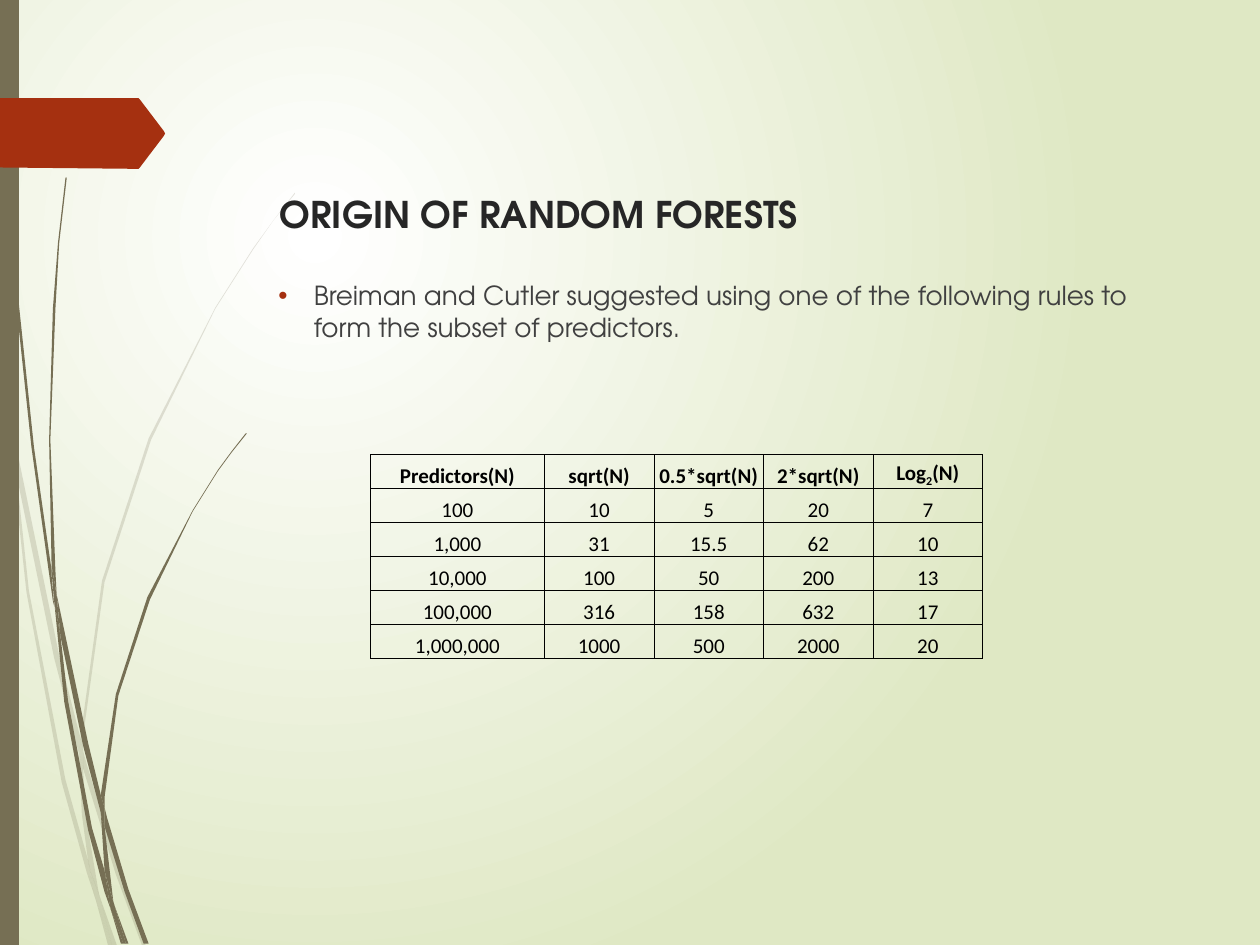
from dataclasses import dataclass

from lxml import etree
from pptx import Presentation
from pptx.dml.color import RGBColor
from pptx.enum.shapes import MSO_SHAPE
from pptx.enum.text import MSO_ANCHOR, PP_ALIGN
from pptx.oxml.ns import qn
from pptx.util import Inches, Pt

RECTANGLE = MSO_SHAPE.RECTANGLE
TOP, MIDDLE, BOTTOM = MSO_ANCHOR.TOP, MSO_ANCHOR.MIDDLE, MSO_ANCHOR.BOTTOM
CENTER = PP_ALIGN.CENTER


@dataclass(frozen=True)
class Theme:
    glow: str = "FFFFFF"
    backdrop: str = "DFE8C4"
    stem: str = "766F54"
    accent: str = "A53010"
    title: str = "262626"
    body: str = "404040"
    table: str = "000000"
    heading_font: str = "TeX Gyre Adventor"
    table_font: str = "Calibri"
    title_size: float = 21
    body_size: float = 15
    table_size: float = 12
    border_width: float = 0.5


THEME = Theme()
TITLE = "ORIGIN OF RANDOM FORESTS"
RULE = "Breiman and Cutler suggested using one of the following rules to form the subset of predictors."
HEADERS = [["Predictors(N)"], ["sqrt(N)"], ["0.5*sqrt(N)"], ["2*sqrt(N)"], ["Log", "2", "(N)"]]
ROWS = [
    ["100", "10", "5", "20", "7"],
    ["1,000", "31", "15.5", "62", "10"],
    ["10,000", "100", "50", "200", "13"],
    ["100,000", "316", "158", "632", "17"],
    ["1,000,000", "1000", "500", "2000", "20"],
]
COLUMN_WIDTHS = [1.38] + [0.87] * 4
ROW_HEIGHT = 0.27

PALE_STEMS = [
    [(0.08, 3.5), (0.06, 3.22), (0, 2.82), (0, 2.99), (0.08, 3.44)],
    [(0.43, 5.22), (0.63, 5.99), (0.64, 5.86), (0.47, 5.2), (0.11, 3.45), (0.13, 3.76)],
    [(0.69, 6.07), (0.66, 5.96), (0.66, 6.1), (0.92, 6.94), (1.13, 7.51), (1.16, 7.51), (0.95, 6.92)],
    [(0.89, 7.51), (0.93, 7.51), (0.79, 7.11)],
    [(0.7, 6.83), (0.52, 6.19), (0.23, 4.69), (0.13, 3.76), (0.08, 3.5), (0.21, 4.7),
     (0.49, 6.21), (0.69, 6.93), (0.76, 7.14), (0.74, 7.07)],
    [(0.63, 5.99), (0.65, 6.46), (0.7, 6.83), (0.72, 6.92), (0.79, 7.11), (0.78, 7.06),
     (0.68, 6.46), (0.66, 6.1), (0.66, 6.08)],
    [(0.66, 5.84), (0.83, 4.62), (1.2, 3.49), (1.71, 2.45), (2.01, 1.98), (2.17, 1.75),
     (2.34, 1.54), (2.34, 1.53), (2.17, 1.75), (2.01, 1.97), (1.71, 2.44), (1.18, 3.48),
     (0.81, 4.61), (0.64, 5.84), (0.64, 5.86), (0.66, 5.96)],
    [(0.76, 7.14), (0.86, 7.51), (0.89, 7.51)],
    [(0.66, 6.08), (0.66, 6.1), (0.66, 5.96), (0.64, 5.86), (0.63, 5.99)],
    [(0.72, 6.92), (0.7, 6.83), (0.74, 7.07), (0.76, 7.14), (0.89, 7.51), (0.79, 7.11)],
]
DARK_STEMS = [
    [(0.05, 1.1), (0.12, 2.33), (0.25, 3.55), (0.42, 4.77), (0.43, 4.81), (0.41, 4.57),
     (0.41, 4.53), (0.27, 3.55), (0.14, 2.32), (0.06, 1.09), (0.03, 0.48), (0.03, 0),
     (0.02, 0), (0.03, 0.48)],
    [(0.66, 5.92), (0.8, 6.45), (0.8, 6.31), (0.7, 5.9), (0.45, 4.72), (0.48, 5.05)],
    [(0.85, 6.49), (0.83, 6.41), (0.83, 6.56), (0.99, 7.08), (1.14, 7.49), (1.18, 7.49), (1.02, 7.06)],
    [(0.83, 6.91), (0.73, 6.57), (0.54, 5.56), (0.48, 5.05), (0.43, 4.77), (0.51, 5.57),
     (0.7, 6.59), (0.83, 7.08), (0.88, 7.22), (0.87, 7.17)],
    [(0.45, 4.72), (0.44, 4.53), (0.4, 3.49), (0.44, 2.45), (0.47, 1.93), (0.53, 1.41),
     (0.52, 1.41), (0.46, 1.93), (0.42, 2.45), (0.39, 3.49), (0.41, 4.49)],
    [(1, 7.49), (1.02, 7.49), (0.91, 7.19)],
    [(0.43, 4.77), (0.48, 5.05), (0.45, 4.72), (0.41, 4.49), (0.41, 4.53)],
    [(0.83, 6.33), (0.94, 5.52), (1.19, 4.76), (1.53, 4.06), (1.73, 3.74), (1.84, 3.59),
     (1.96, 3.44), (1.95, 3.44), (1.84, 3.58), (1.73, 3.73), (1.53, 4.05), (1.17, 4.74),
     (0.92, 5.51), (0.8, 6.31), (0.83, 6.41)],
    [(0.88, 7.22), (0.96, 7.49), (0.98, 7.49)],
    [(0.8, 6.45), (0.83, 6.91), (0.87, 7.06), (0.91, 7.19), (0.9, 7.16), (0.83, 6.56), (0.81, 6.51)],
    [(0.8, 6.45), (0.81, 6.51), (0.83, 6.56), (0.83, 6.41), (0.8, 6.31)],
    [(0.87, 7.06), (0.83, 6.91), (0.87, 7.17), (0.88, 7.22), (0.98, 7.49), (1, 7.49), (0.91, 7.19)],
]
FLAG = [(0, 0.78), (1.1, 0.78), (1.11, 0.79), (1.3, 1.04), (1.31, 1.06), (1.3, 1.08),
        (1.11, 1.33), (1.1, 1.34), (1.02, 1.34), (0, 1.33)]


def paint(shape, color, opacity=100):
    shape.shadow.inherit = False
    shape.fill.solid()
    shape.fill.fore_color.rgb = RGBColor.from_string(color)
    shape.line.fill.background()
    if opacity < 100:
        tint = shape._element.spPr.find(".//" + qn("a:srgbClr"))
        etree.SubElement(tint, qn("a:alpha"), val=str(opacity * 1000))


def add_outline(shapes, points, color, opacity=100):
    corners = [(Inches(x), Inches(y)) for x, y in points]
    builder = shapes.build_freeform(*corners[0], scale=1.0)
    builder.add_line_segments(corners[1:], close=True)
    paint(builder.convert_to_shape(), color, opacity)


def add_run(paragraph, text, font, size, color, bold=False):
    run = paragraph.add_run()
    run.text = text
    run.font.name = font
    run.font.size = Pt(size)
    run.font.color.rgb = RGBColor.from_string(color)
    run.font.bold = bold
    return run


def add_text(slide, box, anchor, text, size, color, bold=False):
    frame = slide.shapes.add_textbox(*map(Inches, box)).text_frame
    frame.word_wrap = True
    frame.vertical_anchor = anchor
    frame.margin_left = frame.margin_right = Inches(0.09)
    frame.margin_top = frame.margin_bottom = Inches(0.04)
    paragraph = frame.paragraphs[0]
    add_run(paragraph, text, THEME.heading_font, size, color, bold)
    return paragraph


def add_bullet(paragraph, color):
    paragraph.space_before = Pt(7.5)
    properties = paragraph._p.get_or_add_pPr()
    properties.set("marL", str(Inches(0.28)))
    properties.set("indent", str(-Inches(0.28)))
    bullet_color = etree.SubElement(properties, qn("a:buClr"))
    etree.SubElement(bullet_color, qn("a:srgbClr"), val=color)
    etree.SubElement(properties, qn("a:buFont"), typeface="Arial")
    etree.SubElement(properties, qn("a:buChar"), char="•")


def set_borders(cell):
    properties = cell._tc.get_or_add_tcPr()
    for position, side in enumerate(("a:lnL", "a:lnR", "a:lnT", "a:lnB")):
        border = etree.Element(qn(side), w=str(Pt(THEME.border_width)))
        fill = etree.SubElement(border, qn("a:solidFill"))
        etree.SubElement(fill, qn("a:srgbClr"), val=THEME.table)
        properties.insert(position, border)


def add_predictor_table(slide):
    content = [HEADERS] + [[[value] for value in row] for row in ROWS]
    frame = slide.shapes.add_table(
        len(content), len(HEADERS), Inches(2.94), Inches(3.61),
        Inches(sum(COLUMN_WIDTHS)), Inches(ROW_HEIGHT * len(content)))
    table = frame.table
    table.first_row = table.horz_banding = False
    for column, width in zip(table.columns, COLUMN_WIDTHS):
        column.width = Inches(width)
    for row_index, row in enumerate(content):
        table.rows[row_index].height = Inches(ROW_HEIGHT)
        for column_index, parts in enumerate(row):
            cell = table.cell(row_index, column_index)
            cell.fill.background()
            cell.vertical_anchor = BOTTOM
            cell.margin_left = cell.margin_right = cell.margin_top = Inches(0.01)
            cell.margin_bottom = 0
            paragraph = cell.text_frame.paragraphs[0]
            paragraph.alignment = CENTER
            for part_index, part in enumerate(parts):
                run = add_run(paragraph, part, THEME.table_font, THEME.table_size,
                              THEME.table, row_index == 0)
                if part_index == 1:
                    run.font._element.set("baseline", "-25000")
            set_borders(cell)


def set_background(slide):
    fill = slide.background.fill
    fill.gradient()
    for stop, color in zip(fill.gradient_stops, (THEME.glow, THEME.backdrop)):
        stop.color.rgb = RGBColor.from_string(color)
    linear = slide._element.find(".//" + qn("a:lin"))
    circle = etree.Element(qn("a:path"), path="circle")
    etree.SubElement(circle, qn("a:fillToRect"), l="50000", t="50000", r="100000", b="100000")
    linear.getparent().replace(linear, circle)


def main():
    presentation = Presentation()
    presentation.slide_width, presentation.slide_height = Inches(10), Inches(7.5)
    slide = presentation.slides.add_slide(presentation.slide_layouts[6])
    set_background(slide)
    for stems, opacity in ((PALE_STEMS, 20), (DARK_STEMS, 100)):
        group = slide.shapes.add_group_shape()
        for points in stems:
            add_outline(group.shapes, points, THEME.stem, opacity)
    paint(slide.shapes.add_shape(RECTANGLE, 0, 0, Inches(0.15), Inches(7.5)), THEME.stem)
    add_outline(slide.shapes, FLAG, THEME.accent)
    add_text(slide, (2.13, 1.45, 7.31, 0.49), MIDDLE, TITLE, THEME.title_size, THEME.title, True)
    rule = add_text(slide, (2.12, 2.18, 7.31, 3.61), TOP, RULE, THEME.body_size, THEME.body)
    add_bullet(rule, THEME.accent)
    add_predictor_table(slide)
    presentation.save("out.pptx")


if __name__ == "__main__":
    main()
